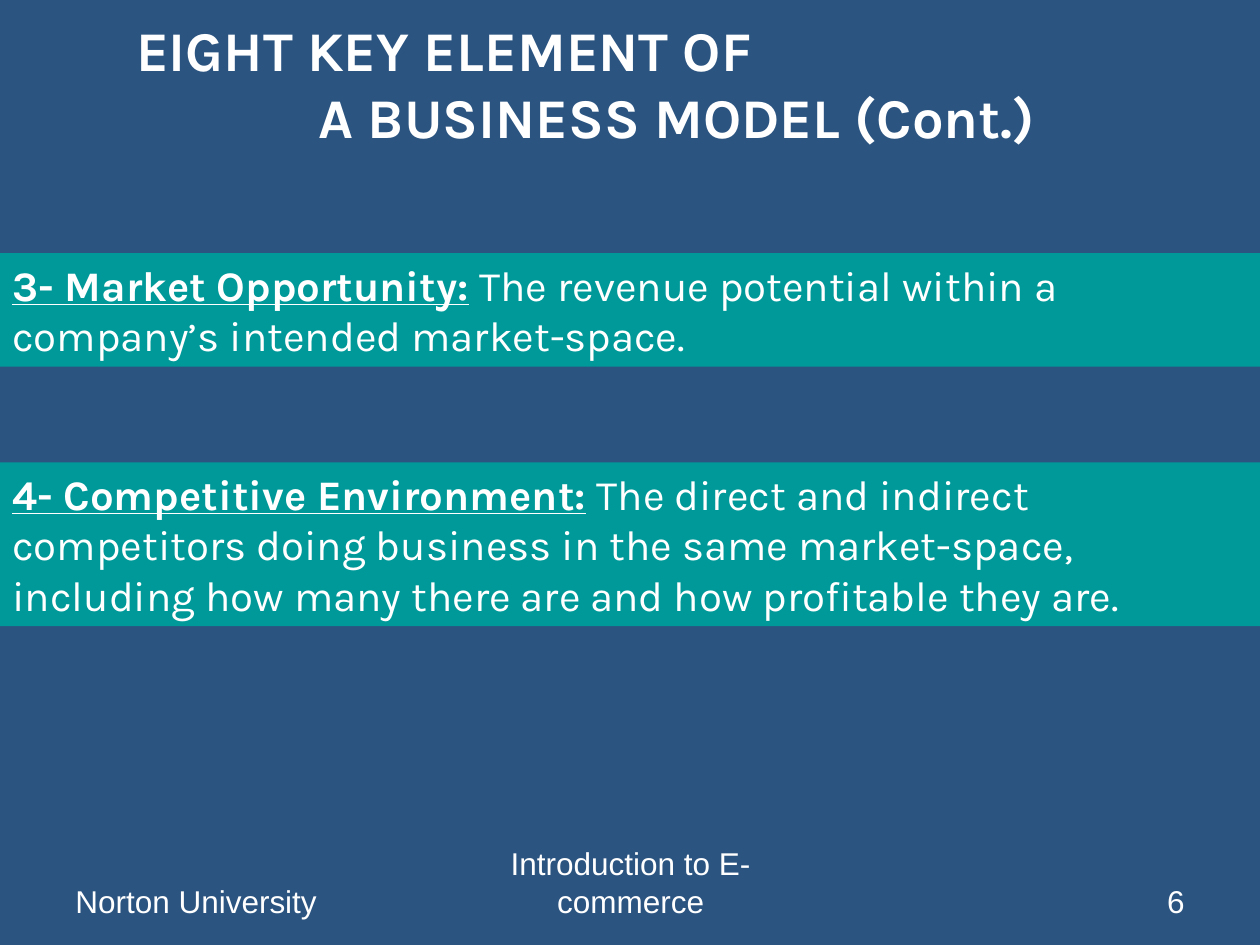
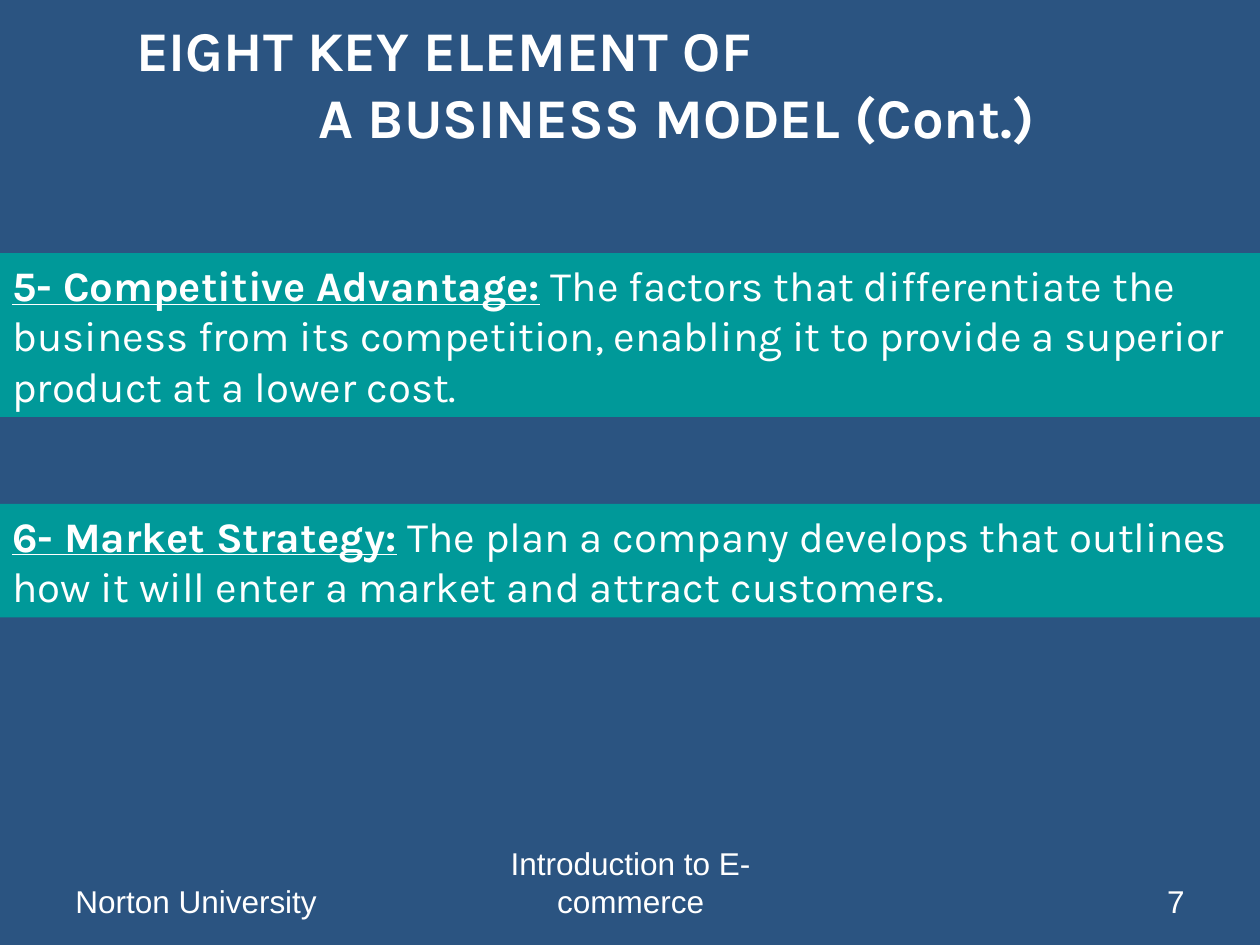
from pptx import Presentation
from pptx.dml.color import RGBColor
from pptx.enum.shapes import MSO_SHAPE
from pptx.enum.text import MSO_ANCHOR, MSO_AUTO_SIZE, PP_ALIGN
from pptx.util import Inches, Pt

# Content: per slide its number and bands (top in inches, text lines, term, definition)
TITLE_LINES = [("EIGHT KEY ELEMENT OF", 0.02), ("A BUSINESS MODEL (Cont.)", 1.47)]
SLIDES = [
    (6, [
        (2.01, 2, "3- Market Opportunity:",
         "The revenue potential within a company’s intended market-space."),
        (3.67, 3, "4- Competitive Environment:",
         "The direct and indirect competitors doing business in the same "
         "market-space, including how many there are and how profitable they are."),
    ]),
    (7, [
        (2.01, 3, "5- Competitive Advantage:",
         "The factors that differentiate the business from its competition, "
         "enabling it to provide a superior product at a lower cost."),
        (4, 2, "6- Market Strategy:",
         "The plan a company develops that outlines how it will enter a market "
         "and attract customers."),
    ]),
]

# Shared style
NAVY = RGBColor(0x2B, 0x54, 0x81)
TEAL = RGBColor(0x00, 0x99, 0x99)
WHITE = RGBColor(0xFF, 0xFF, 0xFF)
HEAD_FONT, FOOT_FONT = "Karla", "Arial"
WIDTH, HEIGHT = 10, 7.5
LINE_HEIGHT, BAND_PADDING = 0.4, 0.1
FOOT_TOP, FOOT_HEIGHT = 6.83, 0.52


def add_span(para, text, size, font=HEAD_FONT, bold=False, underline=False):
    span = para.add_run()
    span.text = text
    span.font.name = font
    span.font.size = Pt(size)
    span.font.bold = bold
    span.font.underline = underline
    span.font.color.rgb = WHITE


def set_title(page):
    title = page.shapes.title
    title.left, title.top = Inches(0.96), Inches(0.07)
    title.width, title.height = Inches(8.19), Inches(1.17)
    frame = title.text_frame
    frame.auto_size = MSO_AUTO_SIZE.NONE
    frame.vertical_anchor = MSO_ANCHOR.TOP
    for index, (text, indent) in enumerate(TITLE_LINES):
        para = frame.add_paragraph() if index else frame.paragraphs[0]
        para.alignment = PP_ALIGN.LEFT
        # The second line is stepped to the right
        para._p.get_or_add_pPr().set("marL", str(Inches(indent)))
        add_span(para, text, 32, bold=True)


def add_band(page, top, lines, term, definition):
    height = lines * LINE_HEIGHT + BAND_PADDING
    band = page.shapes.add_shape(MSO_SHAPE.RECTANGLE, 0, Inches(top),
                                 Inches(WIDTH), Inches(height))
    band.shadow.inherit = False
    band.fill.solid()
    band.fill.fore_color.rgb = TEAL
    band.line.fill.background()
    frame = band.text_frame
    frame.word_wrap = True
    frame.vertical_anchor = MSO_ANCHOR.TOP
    para = frame.paragraphs[0]
    para.alignment = PP_ALIGN.LEFT
    add_span(para, term, 24, bold=True, underline=True)
    add_span(para, " ", 24, bold=True)
    add_span(para, definition, 24)


def add_footer(page, number):
    parts = [
        ("Norton University", 0.5, 2.33, PP_ALIGN.LEFT),
        ("Introduction to E-commerce", 3.42, 3.17, PP_ALIGN.CENTER),
        (str(number), 7.17, 2.33, PP_ALIGN.RIGHT),
    ]
    for text, left, width, alignment in parts:
        box = page.shapes.add_textbox(Inches(left), Inches(FOOT_TOP),
                                      Inches(width), Inches(FOOT_HEIGHT))
        frame = box.text_frame
        frame.word_wrap = True
        frame.vertical_anchor = MSO_ANCHOR.BOTTOM
        para = frame.paragraphs[0]
        para.alignment = alignment
        add_span(para, text, 18, font=FOOT_FONT)


def main():
    deck = Presentation()
    deck.slide_width, deck.slide_height = Inches(WIDTH), Inches(HEIGHT)
    background = deck.slide_master.background.fill
    background.solid()
    background.fore_color.rgb = NAVY
    title_only = deck.slide_layouts[5]
    for number, bands in SLIDES:
        page = deck.slides.add_slide(title_only)
        set_title(page)
        for band in bands:
            add_band(page, *band)
        add_footer(page, number)
    deck.save("out.pptx")


if __name__ == "__main__":
    main()
